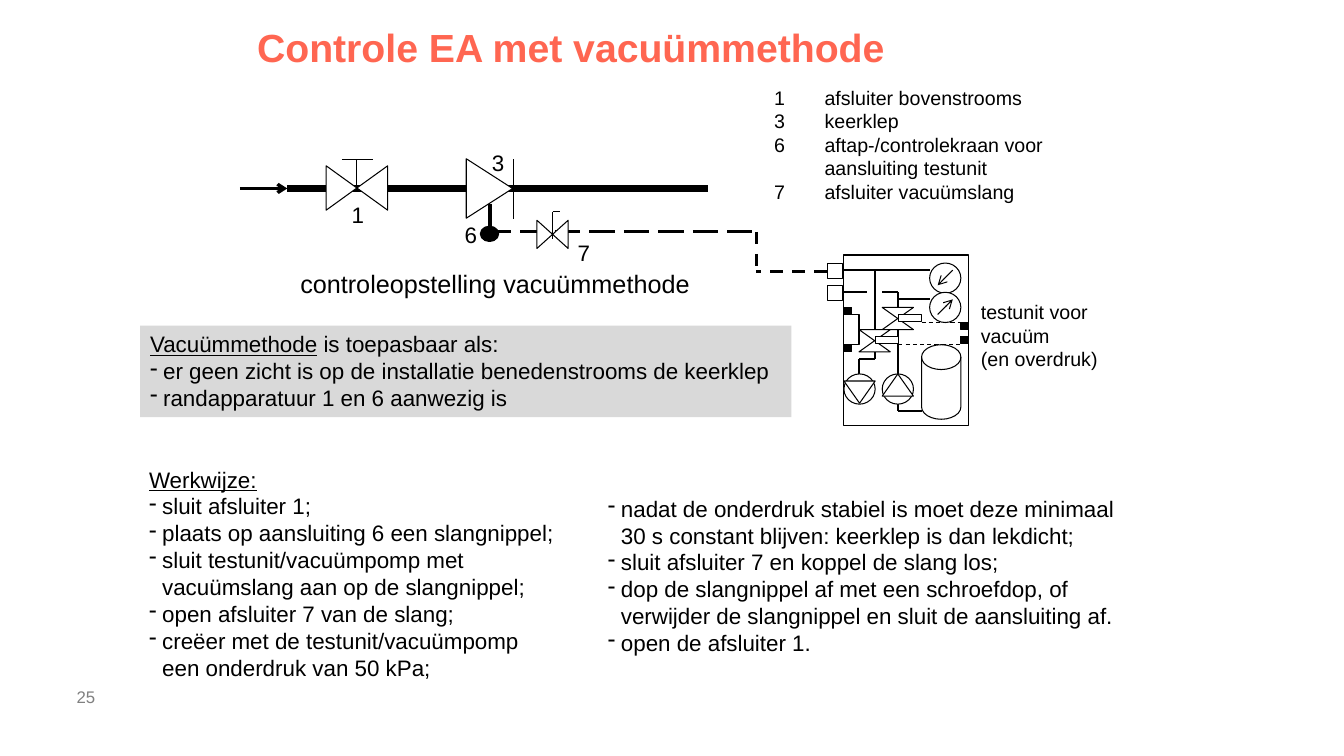
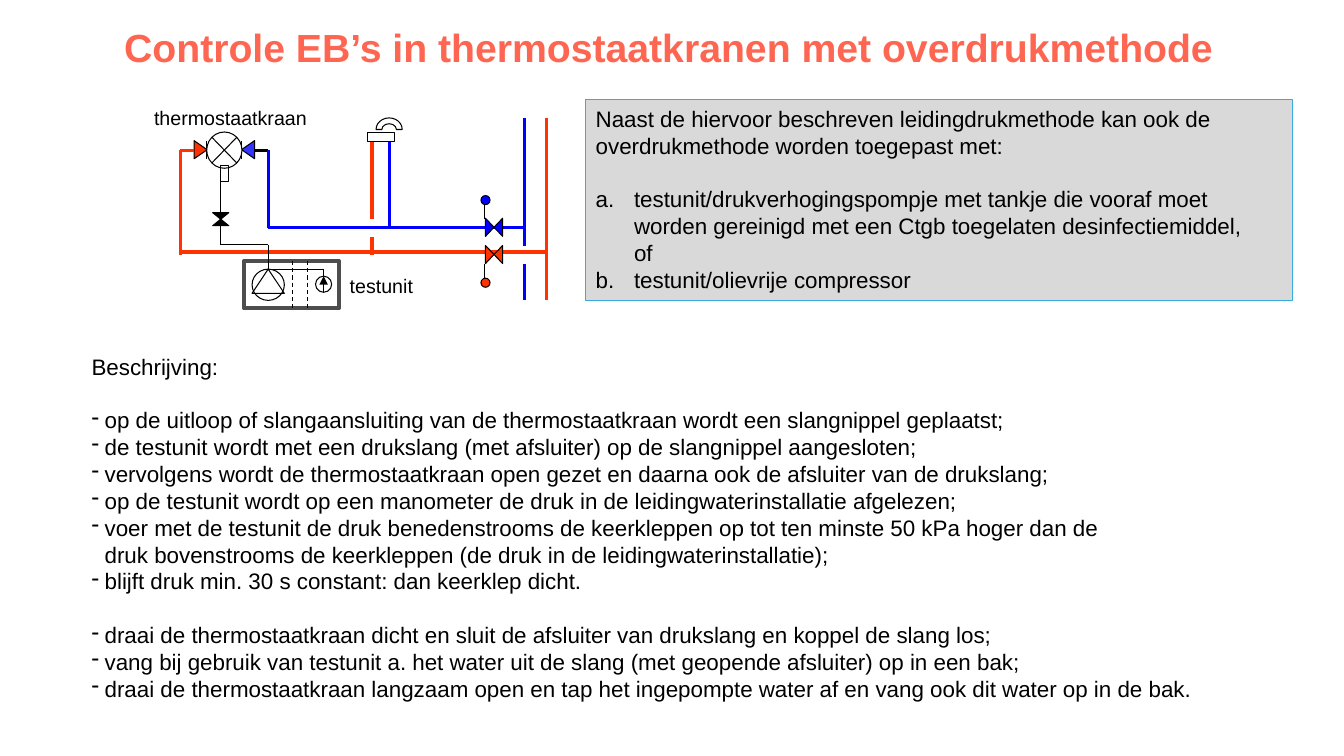
from itertools import pairwise

from lxml.etree import SubElement
from pptx import Presentation
from pptx.dml.color import RGBColor
from pptx.enum.dml import MSO_LINE
from pptx.enum.shapes import MSO_CONNECTOR, MSO_SHAPE
from pptx.enum.text import MSO_ANCHOR, MSO_AUTO_SIZE, PP_ALIGN
from pptx.oxml.ns import qn
from pptx.util import Inches, Pt

HUES = {
    "title": "FF6651", "ink": "000000", "page": "FFFFFF", "panel": "D9D9D9",
    "edge": "38AADE", "note": "808080", "case": "4D4D4D",
    "hot": "FF3300", "cold": "0000FF", "cool": "3333FF",
}
FONT = "Arial"
BODY, SMALL = 16, 14
LEAD = 1.2  # line pitch as a multiple of the text size
DASH, LONG = MSO_LINE.DASH, MSO_LINE.LONG_DASH

RECT, OVAL = MSO_SHAPE.RECTANGLE, MSO_SHAPE.OVAL
VALVE = MSO_SHAPE.FLOWCHART_COLLATE
DOWN, UP = MSO_SHAPE.FLOWCHART_MERGE, MSO_SHAPE.FLOWCHART_EXTRACT


def hue(name):
    return RGBColor.from_string(HUES[name])


# Text
def style(para, size, color="ink", bold=False):
    para.line_spacing = Pt(size * LEAD)
    for run in para.runs:
        font = run.font
        font.name, font.size, font.bold = FONT, Pt(size), bold
        font.color.rgb = hue(color)


def hang(para, depth, tag=None, **attrs):
    props = para._p.get_or_add_pPr()
    props.set("marL", str(Inches(depth)))
    props.set("indent", str(-Inches(depth)))
    if tag:
        SubElement(props, qn(tag), attrs)


def write(frame, rows, size=BODY, color="ink", gaps=()):
    """Rows starting with '- ' or '# ' become dashed or lettered items;
    rows with a tab get a hanging indent; gaps lists rows after a blank line."""
    frame.word_wrap = True
    frame.auto_size = MSO_AUTO_SIZE.NONE
    for i, row in enumerate(rows):
        para = frame.paragraphs[0] if i == 0 else frame.add_paragraph()
        para.text = row[2:] if row[:2] in ("- ", "# ") else row
        if row.startswith("- "):
            hang(para, 0.13, "a:buChar", char="-")
        elif row.startswith("# "):
            hang(para, 0.38, "a:buAutoNum", type="alphaLcPeriod")
        elif "\t" in row:
            hang(para, 0.5)
        para.alignment = PP_ALIGN.LEFT
        if i in gaps:
            para.space_before = Pt(size * LEAD)
        style(para, size, color)
    return frame


class Pen:
    """Draws on a slide relative to the corner of a region."""

    def __init__(self, slide, left, top):
        self.shapes, self.left, self.top = slide.shapes, left, top

    def spot(self, x, y):
        return Inches(self.left + x), Inches(self.top + y)

    def text(self, x, y, w, h, rows, size=BODY, **more):
        box = self.shapes.add_textbox(*self.spot(x, y), Inches(w), Inches(h))
        return write(box.text_frame, rows, size, **more)

    def shape(self, kind, x, y, w, h, fill="page", line="ink", width=0.75, turn=0):
        item = self.shapes.add_shape(kind, *self.spot(x, y), Inches(w), Inches(h))
        item.shadow.inherit = False
        item.rotation = turn
        if fill:
            item.fill.solid()
            item.fill.fore_color.rgb = hue(fill)
        else:
            item.fill.background()
        if line:
            item.line.color.rgb = hue(line)
            item.line.width = Pt(width)
        else:
            item.line.fill.background()
        return item

    def pipe(self, *spots, color="ink", width=0.75, dash=None, tip=None):
        """Straight connectors through the spots, with a tip at the end."""
        for start, end in pairwise(spots):
            link = self.shapes.add_connector(
                MSO_CONNECTOR.STRAIGHT, *self.spot(*start), *self.spot(*end))
            link.line.color.rgb = hue(color)
            link.line.width = Pt(width)
            if dash:
                link.line.dash_style = dash
            props = link.element.spPr
            if tip and end == spots[-1]:
                SubElement(props.find(qn("a:ln")), qn("a:tailEnd"), type=tip)
            SubElement(props, qn("a:effectLst"))

    def panel(self, w, h, rows, line=None, **more):
        frame = self.shape(RECT, 0, 0, w, h, "panel", line).text_frame
        frame.vertical_anchor = MSO_ANCHOR.TOP
        return write(frame, rows, **more)


# Shared title
def head(deck, text, left, width, align):
    slide = deck.slides.add_slide(deck.slide_layouts[5])
    title = slide.shapes.title
    title.left, title.top = Inches(left), Inches(0.15)
    title.width, title.height = Inches(width), Inches(0.63)
    frame = title.text_frame
    frame.text = text
    frame.word_wrap = True
    frame.auto_size = MSO_AUTO_SIZE.NONE
    frame.vertical_anchor = MSO_ANCHOR.MIDDLE
    frame.paragraphs[0].alignment = align
    style(frame.paragraphs[0], 28, "title", True)
    return slide


# Pipe with check valve, drain and hose
def scheme(pen):
    pen.pipe((2.52, 0.9), (5.2, 0.9), width=2.25, dash=LONG)
    pen.pipe((5.9, 1.29), (5.2, 1.29), width=2.25, dash=DASH)
    pen.pipe((5.2, 0.9), (5.2, 1.29), width=2.25, dash=DASH)
    pen.pipe((0.55, 0.47), (4.72, 0.47), width=4.5)
    pen.pipe((0.08, 0.47), (0.55, 0.47), width=2.25, tip="arrow")
    # Check valve
    pen.shape(DOWN, 2.26, 0.24, 0.59, 0.46, turn=270)
    pen.pipe((2.79, 0.18), (2.79, 0.77))
    # Stop valve
    pen.shape(VALVE, 1.02, 0.16, 0.44, 0.61, turn=270)
    pen.pipe((1.24, 0.47), (1.24, 0.18))
    pen.pipe((1.09, 0.18), (1.4, 0.18))
    # Drain and hose valve
    pen.pipe((2.56, 0.62), (2.56, 0.93), width=3)
    pen.shape(OVAL, 2.48, 0.86, 0.15, 0.12, "ink", width=3)
    pen.shape(VALVE, 3.04, 0.77, 0.28, 0.31, turn=90)
    pen.pipe((3.18, 0.97), (3.18, 0.7), (3.25, 0.7))
    # Labels
    pen.text(0.58, 1.21, 4.24, 0.4, ["controleopstelling vacuümmethode"], 18)
    for mark, x, y in (("1", 1.09, 0.55), ("3", 2.48, 0.03),
                       ("6", 2.21, 0.74), ("7", 3.33, 0.92)):
        pen.text(x, y, 0.4, 0.37, [mark])


# Vacuum test unit
def unit(pen):
    pen.shape(RECT, 0.16, 0, 1.24, 1.69, None)
    for run in (
        [(0.7, 0.37), (0.7, 1.55), (0.93, 1.55)],
        [(0.16, 0.15), (1.01, 0.15)],
        [(0.31, 1.18), (0.31, 1.03), (0.47, 1.03), (0.47, 0.15)],
        [(0.16, 0.37), (0.39, 0.37)],
        [(0.54, 0.37), (0.7, 0.37)],
        [(0.7, 0.44), (1.01, 0.44)],
    ):
        pen.pipe(*run, width=1.5)
    pen.shape(MSO_SHAPE.FLOWCHART_MAGNETIC_DISK, 0.93, 0.89, 0.39, 0.74)
    # Gauges
    for y in (0.08, 0.37):
        pen.shape(OVAL, 1.01, y, 0.31, 0.3)
    pen.pipe((1.24, 0.15), (1.09, 0.3), tip="arrow")
    pen.pipe((1.09, 0.59), (1.24, 0.44), tip="arrow")
    # Ports and mounts
    pen.shape(RECT, 0.16, 0.59, 0.15, 0.3)
    for x, y in ((0.16, 0.52), (0.16, 0.89), (1.32, 0.67), (1.32, 0.81)):
        pen.shape(RECT, x, y, 0.08, 0.07, "ink")
    for y in (0.08, 0.3):
        pen.shape(RECT, 0, y, 0.15, 0.15)
    # Pumps
    for x, drop, turn in ((0.54, 0, 0), (0.16, 0.07, 180)):
        pen.shape(OVAL, x, 1.18, 0.31, 0.3)
        pen.shape(UP, x, 1.18 + drop, 0.31, 0.22, turn=turn)
    # Valves with their control lines
    for x, y in ((0.54, 0.52), (0.31, 0.74)):
        pen.shape(VALVE, x, y, 0.31, 0.22)
        pen.shape(RECT, x + 0.16, y + 0.07, 0.23, 0.07)
        pen.pipe((x + 0.39, y + 0.15), (1.32, y + 0.15), dash=DASH)
    pen.text(1.42, 0.4, 1.57, 0.81,
             ["testunit voor", "vacuüm", "(en overdruk)"], SMALL)


# Thermostatic tap with hot and cold supply
def circuit(pen):
    pen.shape(DOWN, 0.5, 0.42, 0.18, 0.13, "hot", turn=270)
    pen.shape(DOWN, 0.97, 0.42, 0.18, 0.13, "cool", turn=90)
    for x in (0.65, 1):
        pen.pipe((x, 0.4), (x, 0.58))
    pen.shape(MSO_SHAPE.FLOWCHART_SUMMING_JUNCTION, 0.65, 0.31, 0.35, 0.36)
    pen.pipe((1.13, 0.49), (1.26, 0.49), width=2.25)
    # Supply pipes
    for color, *run in (
        ("hot", (0.52, 0.49), (0.39, 0.49), (0.39, 1.53)),
        ("cold", (1.26, 0.49), (1.26, 1.26), (3.8, 1.26)),
        ("hot", (0.39, 1.5), (4.02, 1.5)),
        ("cold", (3.8, 0.17), (3.8, 1.44)),
        ("cold", (3.8, 1.62), (3.8, 1.98)),
        ("hot", (4.02, 0.17), (4.02, 1.98)),
        ("hot", (2.29, 1.17), (2.29, 0.4)),
        ("hot", (2.29, 1.35), (2.29, 1.53)),
        ("cold", (2.46, 1.26), (2.46, 0.4)),
    ):
        pen.pipe(*run, color=color, width=2.25)
    # Tap
    pen.shape(RECT, 2.25, 0.31, 0.26, 0.09, None)
    pen.shape(MSO_SHAPE.BLOCK_ARC, 2.33, 0.17, 0.26, 0.23, None)
    # Check valves with drains
    for color, y, start, end, ball in (("cold", 1.17, 1.17, 1.03, 0.94),
                                       ("hot", 1.44, 1.62, 1.76, 1.76)):
        pen.shape(VALVE, 3.41, y, 0.18, 0.17, color, turn=90)
        pen.pipe((3.41, start), (3.41, end))
        pen.shape(OVAL, 3.37, ball, 0.09, 0.09, color)
    # Test unit
    pen.shape(RECT, 1.02, 1.59, 0.94, 0.47, None, "case", 3)
    pen.shape(OVAL, 1.1, 1.67, 0.32, 0.31, None)
    pen.shape(UP, 1.1, 1.67, 0.32, 0.24, None)
    pen.shape(OVAL, 1.73, 1.74, 0.16, 0.16, None)
    pen.pipe((1.81, 1.9), (1.81, 1.74), tip="triangle")
    for x in (1.5, 1.65):
        pen.pipe((x, 1.59), (x, 2.06), dash=DASH)
    # Hose
    pen.shape(RECT, 0.79, 0.64, 0.08, 0.16, None)
    pen.pipe((0.79, 0.8), (0.79, 1.43), (1.26, 1.43), (1.26, 1.67),
             (1.81, 1.67), (1.81, 1.74))
    pen.shape(VALVE, 0.71, 1.11, 0.16, 0.13, "ink")
    pen.text(0.03, 0, 1.9, 0.34, ["thermostaatkraan"], SMALL)
    pen.text(1.97, 1.67, 1, 0.34, ["testunit"], SMALL)


def vacuum(deck):
    slide = head(deck, "Controle EA met vacuümmethode", 2.45, 8.36, PP_ALIGN.LEFT)
    Pen(slide, 7.58, 0.8).text(0, 0, 3.07, 1.28, [
        "1\tafsluiter bovenstrooms", "3\tkeerklep",
        "6\taftap-/controlekraan voor\vaansluiting testunit",
        "7\tafsluiter vacuümslang"], SMALL)
    scheme(Pen(slide, 2.3, 1.4))
    unit(Pen(slide, 8.21, 2.53))
    # Conditions
    para = Pen(slide, 1.39, 3.23).panel(6.46, 0.91, [
        "Vacuümmethode",
        "- er geen zicht is op de installatie benedenstrooms de keerklep",
        "- randapparatuur 1 en 6 aanwezig is"]).paragraphs[0]
    para.add_run().text = " is toepasbaar als:"
    style(para, BODY)
    para.runs[0].font.underline = True
    # Steps in two columns
    steps = Pen(slide, 1.38, 4.57)
    first = steps.text(0, 0, 4.41, 2.52, [
        "Werkwijze:", "- sluit afsluiter 1;",
        "- plaats op aansluiting 6 een slangnippel;",
        "- sluit testunit/vacuümpomp met\vvacuümslang aan op de slangnippel;",
        "- open afsluiter 7 van de slang;",
        "- creëer met de testunit/vacuümpomp\veen onderdruk van 50 kPa;"])
    first.paragraphs[0].runs[0].font.underline = True
    steps.text(4.55, 0.29, 5.45, 1.72, [
        "- nadat de onderdruk stabiel is moet deze minimaal"
        "\v30 s constant blijven: keerklep is dan lekdicht;",
        "- sluit afsluiter 7 en koppel de slang los;",
        "- dop de slangnippel af met een schroefdop, of"
        "\vverwijder de slangnippel en sluit de aansluiting af.",
        "- open de afsluiter 1."])
    # Page number
    page = Pen(slide, 0.76, 6.71).text(0, 0, 0.71, 0.4, ["25"], 12, color="note")
    page.margin_left = page.margin_right = page.margin_top = page.margin_bottom = 0
    page.vertical_anchor = MSO_ANCHOR.MIDDLE


def pressure(deck):
    slide = head(deck, "Controle EB’s in thermostaatkranen met overdrukmethode",
                 0.43, 12.4, PP_ALIGN.CENTER)
    circuit(Pen(slide, 1.4, 1))
    Pen(slide, 5.81, 0.99).panel(7.01, 1.99, [
        "Naast de hiervoor beschreven leidingdrukmethode kan ook de"
        "\voverdrukmethode worden toegepast met:",
        "# testunit/drukverhogingspompje met tankje die vooraf moet worden "
        "gereinigd met een Ctgb toegelaten desinfectiemiddel,\vof",
        "# testunit/olievrije compressor"], "edge", gaps=(1,))
    Pen(slide, 0.81, 3.45).text(0, 0, 12.34, 3.6, [
        "Beschrijving:",
        "- op de uitloop of slangaansluiting van de thermostaatkraan wordt een slangnippel geplaatst;",
        "- de testunit wordt met een drukslang (met afsluiter) op de slangnippel aangesloten;",
        "- vervolgens wordt de thermostaatkraan open gezet en daarna ook de afsluiter van de drukslang;",
        "- op de testunit wordt op een manometer de druk in de leidingwaterinstallatie afgelezen;",
        "- voer met de testunit de druk benedenstrooms de keerkleppen op tot ten minste 50 kPa hoger dan de"
        "\vdruk bovenstrooms de keerkleppen (de druk in de leidingwaterinstallatie);",
        "- blijft druk min. 30 s constant: dan keerklep dicht.",
        "- draai de thermostaatkraan dicht en sluit de afsluiter van drukslang en koppel de slang los;",
        "- vang bij gebruik van testunit a. het water uit de slang (met geopende afsluiter) op in een bak;",
        "- draai de thermostaatkraan langzaam open en tap het ingepompte water af en vang ook dit water op in de bak.",
    ], gaps=(1, 7))


def main():
    deck = Presentation()
    deck.slide_width, deck.slide_height = Inches(13.33), Inches(7.5)
    vacuum(deck)
    pressure(deck)
    deck.save("out.pptx")


if __name__ == "__main__":
    main()
